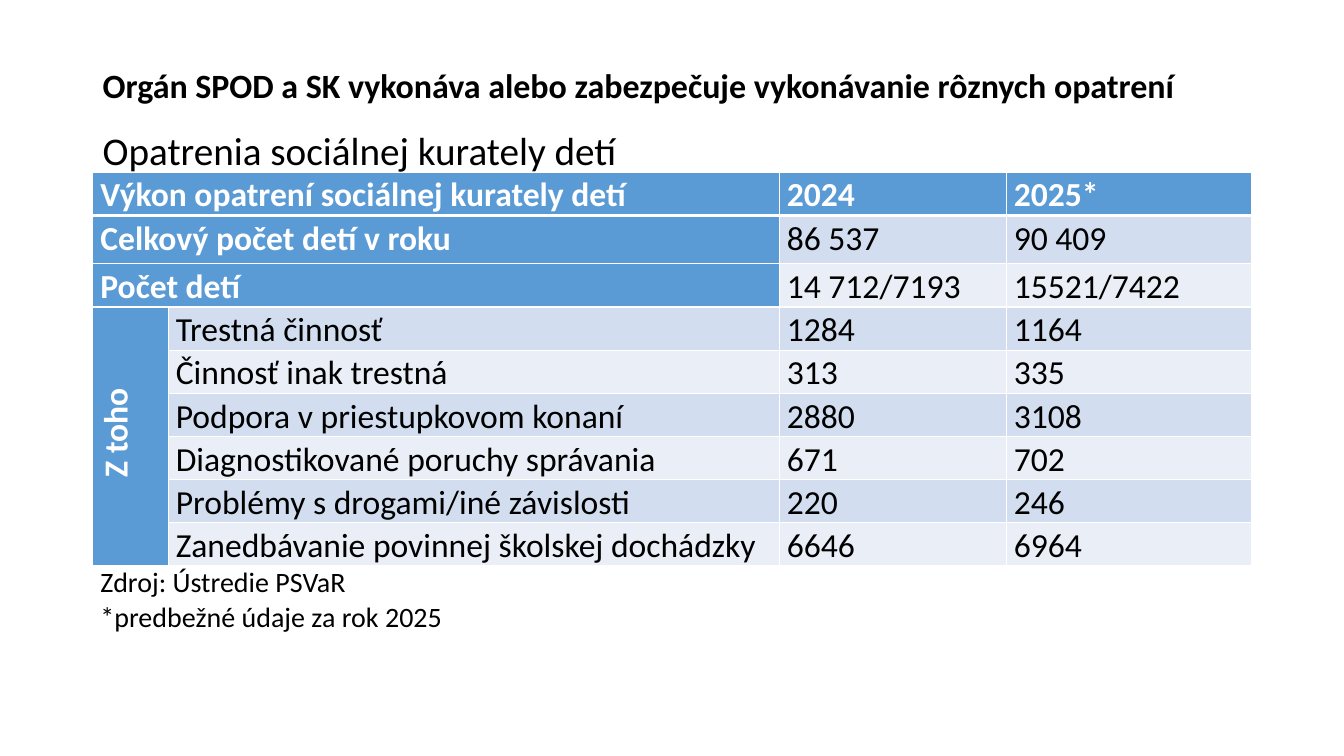
from dataclasses import dataclass

from lxml.etree import SubElement
from pptx import Presentation
from pptx.dml.color import RGBColor
from pptx.enum.text import MSO_ANCHOR, PP_ALIGN
from pptx.oxml.ns import qn
from pptx.util import Cm, Pt

TITLE = "Orgán SPOD a SK vykonáva alebo zabezpečuje vykonávanie rôznych opatrení"
SUBTITLE = "Opatrenia sociálnej kurately detí"
HEADER = ("Výkon opatrení sociálnej kurately detí", "2024", "2025*")
TOTALS = [
    ("Celkový počet detí v roku", "86 537", "90 409"),
    ("Počet detí", "14 712/7193", "15521/7422"),
]
GROUP = "Z toho"
DETAILS = [
    ("Trestná činnosť", "1284", "1164"),
    ("Činnosť inak trestná", "313", "335"),
    ("Podpora v priestupkovom konaní", "2880", "3108"),
    ("Diagnostikované poruchy správania", "671", "702"),
    ("Problémy s drogami/iné závislosti", "220", "246"),
    ("Zanedbávanie povinnej školskej dochádzky", "6646", "6964"),
]
NOTES = "Zdroj: Ústredie PSVaR\n*predbežné údaje za rok 2025"

LEFT, WIDTH = Cm(2.34), Cm(29.21)
COLUMN_WIDTHS = (Cm(1.9), Cm(15.4), Cm(5.72), Cm(6.19))
ROW_HEIGHT, TOTAL_ROW_HEIGHT = Cm(1.07), Cm(1.22)


@dataclass(frozen=True)
class Theme:
    font: str = "Calibri"
    black: str = "000000"
    white: str = "FFFFFF"
    blue: str = "5B9BD5"
    bands: tuple = ("D2DEEF", "EAEFF7")
    title_size: float = 24.3
    subtitle_size: float = 28
    table_size: float = 24
    note_size: float = 20
    thin: float = 1
    thick: float = 3


theme = Theme()


def style_text(frame, size, color, bold, spacing):
    for para in frame.paragraphs:
        para.line_spacing = spacing
        para.font.name = theme.font
        para.font.size = Pt(size)
        para.font.bold = bold
        para.font.color.rgb = RGBColor.from_string(color)


def add_text(page, text, top, height, size, bold=False):
    box = page.shapes.add_textbox(LEFT, top, WIDTH, height)
    frame = box.text_frame
    frame.word_wrap = True
    frame.text = text
    style_text(frame, size, theme.black, bold, 0.9)
    return frame


def add_borders(cell, row):
    """White lines, thicker between the header and the first data row."""
    properties = cell._tc.get_or_add_tcPr()
    thick_side = {0: "lnB", 1: "lnT"}.get(row)
    for side in ("lnL", "lnR", "lnT", "lnB"):
        points = theme.thick if side == thick_side else theme.thin
        line = SubElement(properties, qn(f"a:{side}"), w=str(Pt(points)))
        fill = SubElement(line, qn("a:solidFill"))
        SubElement(fill, qn("a:srgbClr"), val=theme.white)


def set_cell(cell, text, fill=None, bold=False, size=theme.table_size, spacing=1.07):
    cell.margin_left = cell.margin_right = Cm(0.19)
    cell.margin_top = cell.margin_bottom = 0
    cell.text = text
    color = theme.white if bold else theme.black
    style_text(cell.text_frame, size, color, bold, spacing)
    if fill:
        cell.fill.solid()
        cell.fill.fore_color.rgb = RGBColor.from_string(fill)
    else:
        cell.fill.background()


def add_measures_table(page):
    rows = [HEADER, *TOTALS, *DETAILS]
    first_detail, note_row = 1 + len(TOTALS), len(rows)
    frame = page.shapes.add_table(note_row + 1, len(COLUMN_WIDTHS), LEFT, Cm(4.34),
                                  WIDTH, ROW_HEIGHT * (note_row + 1))
    table = frame.table
    table.first_row = table.horz_banding = False
    for column, width in zip(table.columns, COLUMN_WIDTHS):
        column.width = width
    for index, row in enumerate(table.rows):
        row.height = TOTAL_ROW_HEIGHT if index == 1 else ROW_HEIGHT
        for cell in row.cells:
            add_borders(cell, index)
            cell.fill.background()

    for index, (label, *values) in enumerate(rows):
        is_header, is_detail = index == 0, index >= first_detail
        band = theme.blue if is_header else theme.bands[(index - 1) % 2]
        if is_detail:
            set_cell(table.cell(index, 1), label, band)
        else:
            table.cell(index, 0).merge(table.cell(index, 1))
            set_cell(table.cell(index, 0), label, theme.blue, bold=True)
        for column, value in enumerate(values, start=2):
            set_cell(table.cell(index, column), value, band, bold=is_header)

    group = table.cell(first_detail, 0)
    group.merge(table.cell(note_row - 1, 0))
    set_cell(group, GROUP, theme.blue, bold=True)
    group._tc.get_or_add_tcPr().set("vert", "vert270")
    para = group.text_frame.paragraphs[0]
    para.alignment = PP_ALIGN.CENTER
    para._p.get_or_add_pPr().set("marL", str(Cm(0.2)))

    notes = table.cell(note_row, 0)
    notes.merge(table.cell(note_row, len(COLUMN_WIDTHS) - 1))
    set_cell(notes, NOTES, size=theme.note_size, spacing=1.0)


def main():
    deck = Presentation()
    deck.slide_width, deck.slide_height = Cm(33.87), Cm(19.05)
    page = deck.slides.add_slide(deck.slide_layouts[6])
    title = add_text(page, TITLE, Cm(1.02), Cm(2.16), theme.title_size, bold=True)
    title.vertical_anchor = MSO_ANCHOR.MIDDLE
    title.margin_top = Cm(0.33)
    add_text(page, SUBTITLE, Cm(3.18), Cm(14), theme.subtitle_size)
    add_measures_table(page)
    deck.save("out.pptx")


if __name__ == "__main__":
    main()
